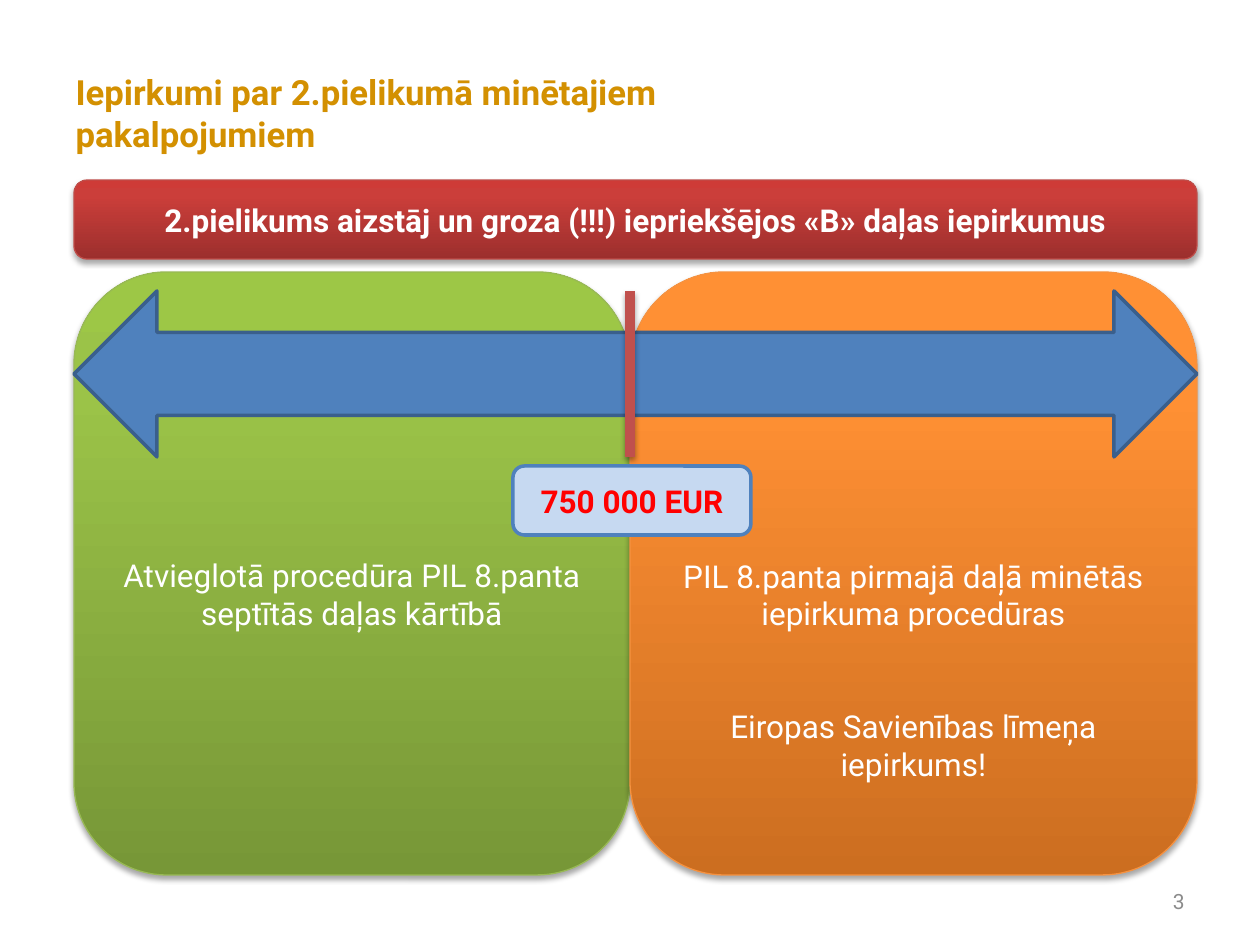
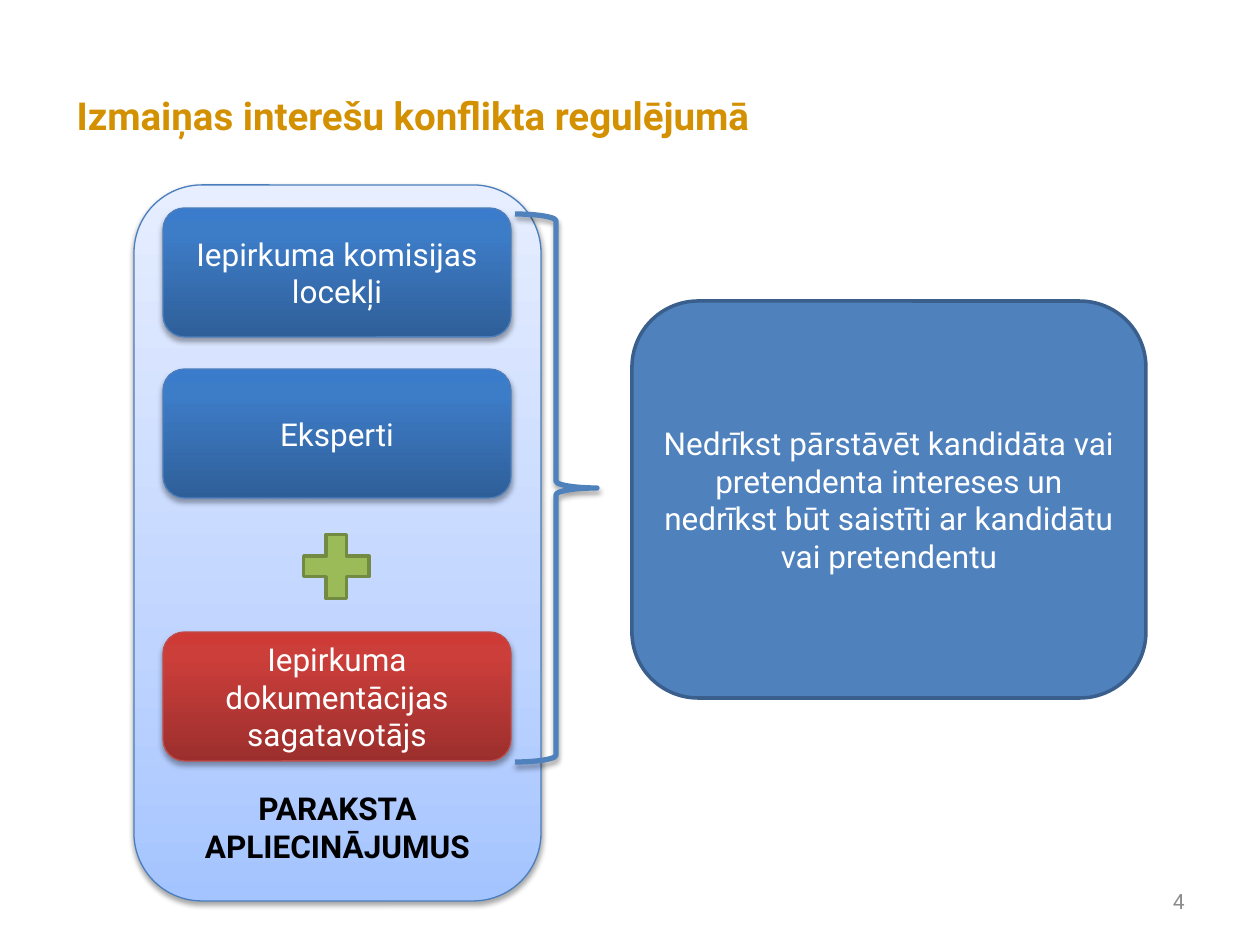
from copy import deepcopy

from lxml import etree
from pptx import Presentation
from pptx.dml.color import RGBColor
from pptx.enum.shapes import MSO_CONNECTOR, MSO_SHAPE
from pptx.enum.text import MSO_ANCHOR, MSO_AUTO_SIZE, PP_ALIGN
from pptx.oxml.ns import qn
from pptx.util import Emu, Pt

ROUNDED, ARROW = MSO_SHAPE.ROUNDED_RECTANGLE, MSO_SHAPE.LEFT_RIGHT_ARROW
PLUS, BRACE = MSO_SHAPE.MATH_PLUS, MSO_SHAPE.RIGHT_BRACE
TOP, MIDDLE, BOTTOM = MSO_ANCHOR.TOP, MSO_ANCHOR.MIDDLE, MSO_ANCHOR.BOTTOM
LEFT, CENTER, RIGHT = PP_ALIGN.LEFT, PP_ALIGN.CENTER, PP_ALIGN.RIGHT

# Shared look
PX_PER_INCH = 126
FONT = "Roboto"
BODY_SIZE = 18
COLORS = {
    "title": "D39001", "number": "8C8C8C", "white": "FFFFFF", "black": "000000",
    "alert": "FF0000", "blue": "4F81BD", "blue_edge": "3A5F8C", "divider": "C0504D",
    "pale": "C6D9F1", "plus": "9BBB59", "plus_edge": "738A42",
    "green_line": "98B955", "orange_line": "F69240", "red_line": "BF4C48",
    "glossy_line": "4B7EBC",
}
# Gradients run from bottom to top: (position, colour)
GRADIENTS = {
    "green": [(0, "779737"), (0.8, "9BC348"), (1, "9DC746")],
    "orange": [(0, "CC6E20"), (0.8, "FF9034"), (1, "FF9136")],
    "red": [(0, "9C2F2D"), (0.8, "CB3E3A"), (1, "CE3B37")],
    "glossy": [(0, "2F5F99"), (0.8, "3D7CC7"), (1, "3A7CCB")],
    "panel": [(0, "A4C4FF"), (0.35, "BFD4FF"), (1, "E6EEFF")],
}
# Style: fill, line colour, line width in points, shadow
STYLES = {
    "green": ("green", "green_line", 0.75, True),
    "orange": ("orange", "orange_line", 0.75, True),
    "red": ("red", "red_line", 0.75, True),
    "glossy": ("glossy", "glossy_line", 0.75, True),
    "panel": ("panel", "glossy_line", 0.75, True),
    "flat": ("blue", "blue_edge", 2, False),
    "threshold": ("pale", "blue", 2, False),
    "plus": ("plus", "plus_edge", 2, False),
    "brace": (None, "blue", 3, True),
}

# Slide 1: procurement of annex 2 services
SERVICES_TITLE = "Iepirkumi par 2.pielikumā minētajiem pakalpojumiem"
ANNEX_BANNER = "2.pielikums aizstāj un groza (!!!) iepriekšējos «B» daļas iepirkumus"
THRESHOLD = "750 000 EUR"
REGIMES = [
    ("green", ["Atvieglotā procedūra PIL 8.panta septītās daļas kārtībā"]),
    ("orange", ["PIL 8.panta pirmajā daļā minētās iepirkuma procedūras",
                "Eiropas Savienības līmeņa iepirkums!"]),
]
SPAN_LEFT, SPAN_RIGHT, SPLIT = 74, 1197, 630
REGIME_EDGES = [SPAN_LEFT, SPLIT, SPAN_RIGHT]
ARROW_TOP, ARROW_HEIGHT = 291, 166

# Slide 2: conflict of interest
CONFLICT_TITLE = "Izmaiņas interešu konflikta regulējumā"
DECLARATION = "PARAKSTA APLIECINĀJUMUS"
RESTRICTION = ("Nedrīkst pārstāvēt kandidāta vai pretendenta intereses un "
               "nedrīkst būt saistīti ar kandidātu vai pretendentu")
SIGNATORIES = [
    ("glossy", 208, "Iepirkuma komisijas locekļi"),
    ("glossy", 369, "Eksperti"),
    ("red", 632, "Iepirkuma dokumentācijas sagatavotājs"),
]


def px(length):
    return Emu(round(length * 914400 / PX_PER_INCH))


def rgb(name):
    return RGBColor.from_string(COLORS[name])


def write(frame, paragraphs, color="white", size=BODY_SIZE, bold=False,
          align=CENTER, anchor=MIDDLE, gap=0):
    frame.word_wrap = True
    frame.auto_size = MSO_AUTO_SIZE.NONE
    frame.vertical_anchor = anchor
    frame.text = "\n".join(paragraphs)
    for index, paragraph in enumerate(frame.paragraphs):
        paragraph.alignment = align
        if index:
            paragraph.space_before = Pt(gap)
        for run in paragraph.runs:
            run.font.name, run.font.size, run.font.bold = FONT, Pt(size), bold
            run.font.color.rgb = rgb(color)


def add_shadow(element):
    properties = element.spPr
    effects = properties.find(qn("a:effectLst"))
    if effects is None:
        effects = etree.SubElement(properties, qn("a:effectLst"))
    shadow = etree.SubElement(effects, qn("a:outerShdw"), blurRad="39370",
                              dist="22860", dir="5400000", rotWithShape="0")
    tone = etree.SubElement(shadow, qn("a:srgbClr"), val=COLORS["black"])
    etree.SubElement(tone, qn("a:alpha"), val="35000")


def fill_gradient(shape, stops):
    shape.fill.gradient()
    shape.fill.gradient_angle = 90
    stop_list = shape._element.spPr.find(".//" + qn("a:gsLst"))
    stop_list.append(deepcopy(stop_list[-1]))
    for stop, (position, color) in zip(shape.fill.gradient_stops, stops):
        stop.position = position
        stop.color.rgb = RGBColor.from_string(color)


def add_part(slide, style, x, y, width, height, preset=ROUNDED):
    fill, line, line_width, shadowed = STYLES[style]
    shape = slide.shapes.add_shape(preset, px(x), px(y), px(width), px(height))
    shape.shadow.inherit = False
    if fill is None:
        shape.fill.background()
    elif fill in GRADIENTS:
        fill_gradient(shape, GRADIENTS[fill])
    else:
        shape.fill.solid()
        shape.fill.fore_color.rgb = rgb(fill)
    shape.line.color.rgb = rgb(line)
    shape.line.width = Pt(line_width)
    if shadowed:
        add_shadow(shape._element)
    return shape


def new_slide(prs, title, size, x, y, number):
    slide = prs.slides.add_slide(prs.slide_layouts[5])
    heading = slide.shapes.title
    heading.left, heading.top, heading.width, heading.height = map(px, (x, y, 784, 59))
    write(heading.text_frame, [title], "title", size, True, LEFT)
    footer = slide.shapes.add_textbox(px(903), px(876), px(294), px(50))
    write(footer.text_frame, [str(number)], "number", 12, align=RIGHT)
    return slide


def build_services(prs):
    slide = new_slide(prs, SERVICES_TITLE, 19.8, 63, 83, 3)
    span = SPAN_RIGHT - SPAN_LEFT

    # Two regimes side by side
    for (style, lines), left, right in zip(REGIMES, REGIME_EDGES, REGIME_EDGES[1:]):
        regime = add_part(slide, style, left, 272, right - left, 603)
        write(regime.text_frame, lines, anchor=TOP, gap=43)
        regime.text_frame.margin_top = px(257)

    # Value axis, divider and threshold
    add_part(slide, "flat", SPAN_LEFT, ARROW_TOP, span, ARROW_HEIGHT, ARROW)
    divider = slide.shapes.add_connector(
        MSO_CONNECTOR.STRAIGHT, px(SPLIT), px(ARROW_TOP),
        px(SPLIT), px(ARROW_TOP + ARROW_HEIGHT))
    divider.line.color.rgb = rgb("divider")
    divider.line.width = Pt(6)
    add_shadow(divider._element)
    threshold = add_part(slide, "threshold", 513, 466, 238, 69)
    write(threshold.text_frame, [THRESHOLD], "alert", bold=True)

    # Banner
    banner = add_part(slide, "red", SPAN_LEFT, 180, span, 79)
    write(banner.text_frame, [ANNEX_BANNER], bold=True)


def build_conflict(prs):
    slide = new_slide(prs, CONFLICT_TITLE, 22, 64, 86, 4)

    # Panel of those who sign
    panel = add_part(slide, "panel", 134, 185, 407, 716)
    write(panel.text_frame, [DECLARATION], "black", bold=True, anchor=BOTTOM)
    panel.text_frame.margin_bottom = px(16)
    for style, top, label in SIGNATORIES:
        signatory = add_part(slide, style, 163, top, 348, 129)
        write(signatory.text_frame, [label])
    add_part(slide, "plus", 292, 523, 89, 87, PLUS)

    # Restriction that applies to all of them
    restriction = add_part(slide, "flat", 632, 301, 514, 397)
    write(restriction.text_frame, [RESTRICTION])
    add_part(slide, "brace", 515, 214, 82, 548, BRACE)


def main():
    prs = Presentation()
    prs.slide_width, prs.slide_height = px(1260), px(945)
    build_services(prs)
    build_conflict(prs)
    prs.save("out.pptx")


if __name__ == "__main__":
    main()
